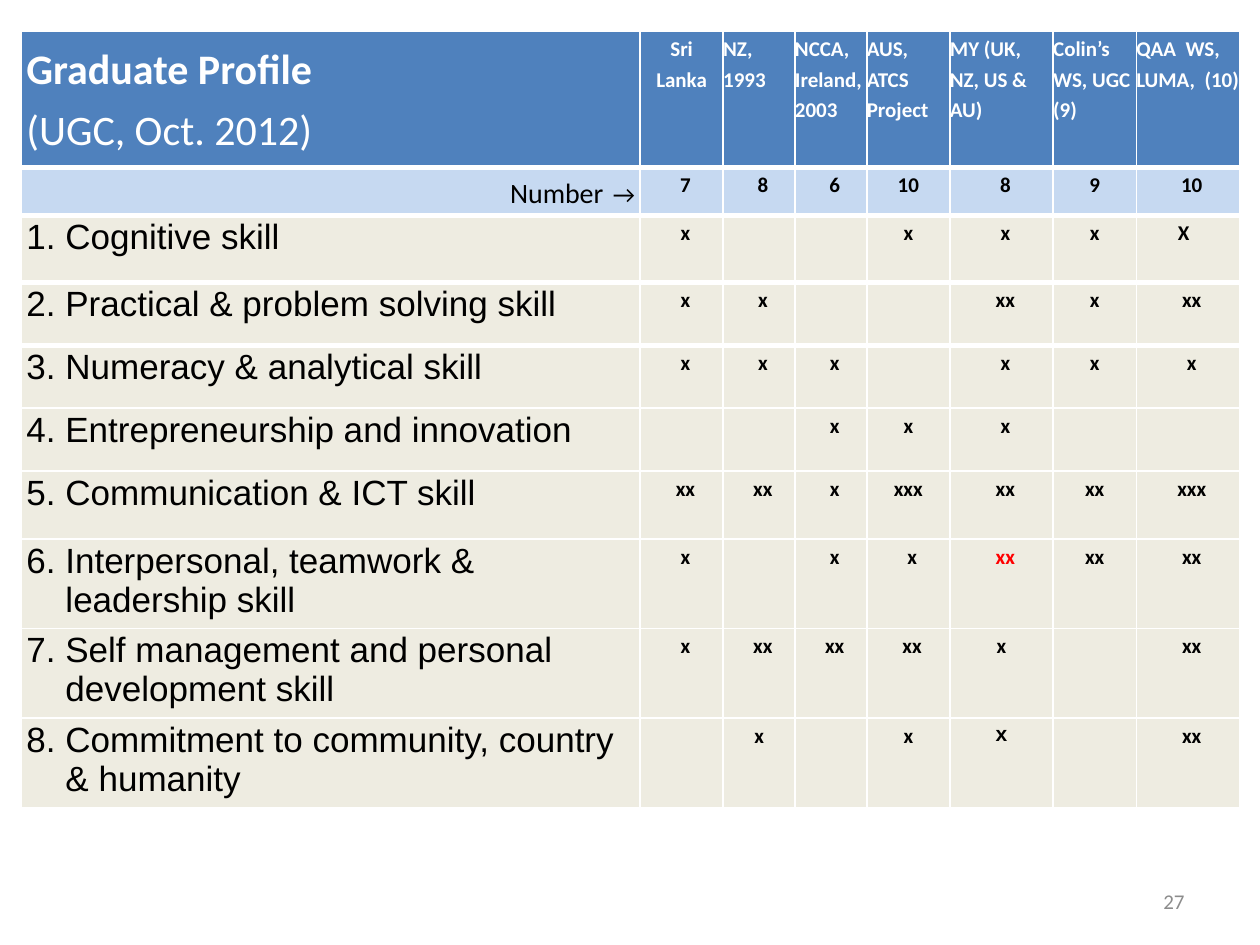
import pptx
import pptx.dml.color
import pptx.enum.text
import pptx.oxml.ns
import pptx.util
import lxml.etree

Inches = pptx.util.Inches
Pt = pptx.util.Pt
ALIGN = pptx.enum.text.PP_ALIGN
RGB = pptx.dml.color.RGBColor.from_string

COLORS = {"header": "4F81BD", "number": "C6D9F1", "body": "EEECE1", "white": "FFFFFF",
          "black": "000000", "red": "FF0000", "gray": "8C8C8C"}
COL_WIDTHS = [4.91, 0.66, 0.57, 0.57, 0.66, 0.82, 0.66, 0.82]
ROW_HEIGHTS = [1.08, 0.38, 0.53, 0.5, 0.5, 0.5, 0.54, 0.71, 0.71, 0.71]
THICK_LINES = 4
AUS_COL, COLIN_COL = 4, 6

HEADERS = [["Sri", "Lanka"], ["NZ, 1993"], ["NCCA, Ireland,", "2003"], ["AUS, ATCS Project"],
           ["MY (UK, NZ, US & AU)"], ["Colin’s WS, UGC (9)"], ["QAA  WS,", "LUMA,  (10)"]]
NUMBERS = ["7", "8", "6", "10", "8", "9", "10"]
SKILLS = [
    ("1. Cognitive skill", ["x", "", "", "x", "x", "x", "X"]),
    ("2. Practical & problem solving skill", ["x", "x", "", "", "xx", "x", "xx"]),
    ("3. Numeracy & analytical skill", ["x", "x", "x", "", "x", "x", "x"]),
    ("4. Entrepreneurship and innovation", ["", "", "x", "x", "x", "", ""]),
    ("5. Communication & ICT skill", ["xx", "xx", "x", "xxx", "xx", "xx", "xxx"]),
    ("6. Interpersonal, teamwork &\nleadership skill", ["x", "", "x", "x", "xx", "xx", "xx"]),
    ("7. Self management and personal\ndevelopment skill", ["x", "xx", "xx", "xx", "x", "", "xx"]),
    ("8. Commitment to community, country\n& humanity", ["", "x", "", "x", "x", "", "xx"]),
]
INDENTED_AUS = {(7, AUS_COL), (8, AUS_COL)}
UNINDENTED = {(8, 5), (9, 2), (9, 5)}
RED_CELL, ARIAL_CELL, LEFT_SHIFTED = (7, 5), (9, 5), (2, 7)


def add_text(p, text, size=12, font="Calibri", color="black", bold=False, align=ALIGN.LEFT,
             spacing=None, gap=None, left=0, right=0, hanging=0):
    p.alignment = align
    if spacing:
        p.line_spacing = spacing
    if gap:
        p.space_before = p.space_after = Pt(gap)
    pPr = p._p.get_or_add_pPr()
    for name, value in (("marL", left), ("marR", right), ("indent", -hanging)):
        if value:
            pPr.set(name, str(Inches(value)))
    for i, line in enumerate(text.split("\n")):
        if i:
            p.add_line_break()
        r = p.add_run()
        r.text = line
        r.font.size = Pt(size)
        r.font.name = font
        r.font.bold = bold
        r.font.color.rgb = RGB(COLORS[color])


def set_border(cell, side, width):
    qn = pptx.oxml.ns.qn
    tcPr = cell._tc.get_or_add_tcPr()
    ln = lxml.etree.SubElement(tcPr, qn("a:ln" + side), w=str(Pt(width)))
    fill = lxml.etree.SubElement(ln, qn("a:solidFill"))
    lxml.etree.SubElement(fill, qn("a:srgbClr"), val=COLORS["white"])


def format_cell(cell, row, col):
    top = 3 if 1 <= row <= THICK_LINES else 1
    bottom = 3 if row < THICK_LINES else 1
    for side, width in (("L", 1), ("R", 1), ("T", top), ("B", bottom)):
        set_border(cell, side, width)
    cell.fill.solid()
    cell.fill.fore_color.rgb = RGB(COLORS[{0: "header", 1: "number"}.get(row, "body")])
    cell.margin_left = cell.margin_right = Inches(0 if col else 0.04)
    cell.margin_top = cell.margin_bottom = Inches(0 if col else 0.02)


def fill_header(table):
    p = table.cell(0, 0).text_frame.paragraphs[0]
    add_text(p, "Graduate Profile", size=24, color="white", bold=True, spacing=1.2)
    p.add_line_break()
    add_text(p, "(UGC, Oct. 2012)", size=24, color="white", spacing=1.2)
    for col, lines in enumerate(HEADERS, 1):
        tf = table.cell(0, col).text_frame
        for i, line in enumerate(lines):
            p = tf.add_paragraph() if i else tf.paragraphs[0]
            add_text(p, line, color="white", bold=True, spacing=1.2,
                     align=ALIGN.CENTER if col == 1 else ALIGN.LEFT)


def fill_marks(table, row, marks):
    for col, mark in enumerate(marks, 1):
        if not mark:
            continue
        pos = (row, col)
        spaced = col == AUS_COL and pos not in INDENTED_AUS
        shifted = pos == LEFT_SHIFTED
        flush = spaced or shifted or col == COLIN_COL or pos in UNINDENTED
        add_text(table.cell(row, col).text_frame.paragraphs[0], mark, bold=True,
                 align=ALIGN.CENTER, spacing=1.2, gap=3 if spaced else None,
                 left=0 if flush else 0.06, right=0.07 if shifted else 0,
                 color="red" if pos == RED_CELL else "black",
                 font="Arial" if pos == ARIAL_CELL else "Calibri")


def add_profile_table(s, left, top, width, height):
    table = s.shapes.add_table(len(ROW_HEIGHTS), len(COL_WIDTHS), Inches(left), Inches(top),
                               Inches(width), Inches(height)).table
    for column, w in zip(table.columns, COL_WIDTHS):
        column.width = Inches(w)
    for row, h in enumerate(ROW_HEIGHTS):
        table.rows[row].height = Inches(h)
        for col in range(len(COL_WIDTHS)):
            format_cell(table.cell(row, col), row, col)
    fill_header(table)
    p = table.cell(1, 0).text_frame.paragraphs[0]
    for text, size in (("Number", 16), ("  ", 12), ("→", 14)):
        add_text(p, text, size=size, align=ALIGN.RIGHT, spacing=1.2)
    fill_marks(table, 1, NUMBERS)
    for row, (skill, marks) in enumerate(SKILLS, 2):
        add_text(table.cell(row, 0).text_frame.paragraphs[0], skill, size=20, font="Arial",
                 left=0.31, hanging=0.31)
        fill_marks(table, row, marks)


def add_page_number(s, left, top, width, height):
    sp = s.shapes.add_textbox(Inches(left), Inches(top), Inches(width), Inches(height))
    tf = sp.text_frame
    tf.word_wrap = True
    tf.vertical_anchor = pptx.enum.text.MSO_ANCHOR.MIDDLE
    add_text(tf.paragraphs[0], "27", color="gray", align=ALIGN.RIGHT)


def main():
    prs = pptx.Presentation()
    prs.slide_width, prs.slide_height = Inches(10), Inches(7.5)
    s = prs.slides.add_slide(prs.slide_layouts[6])
    add_profile_table(s, 0.17, 0.25, 9.67, 6.19)
    add_page_number(s, 7.17, 6.95, 2.33, 0.4)
    prs.save("out.pptx")


if __name__ == "__main__":
    main()
